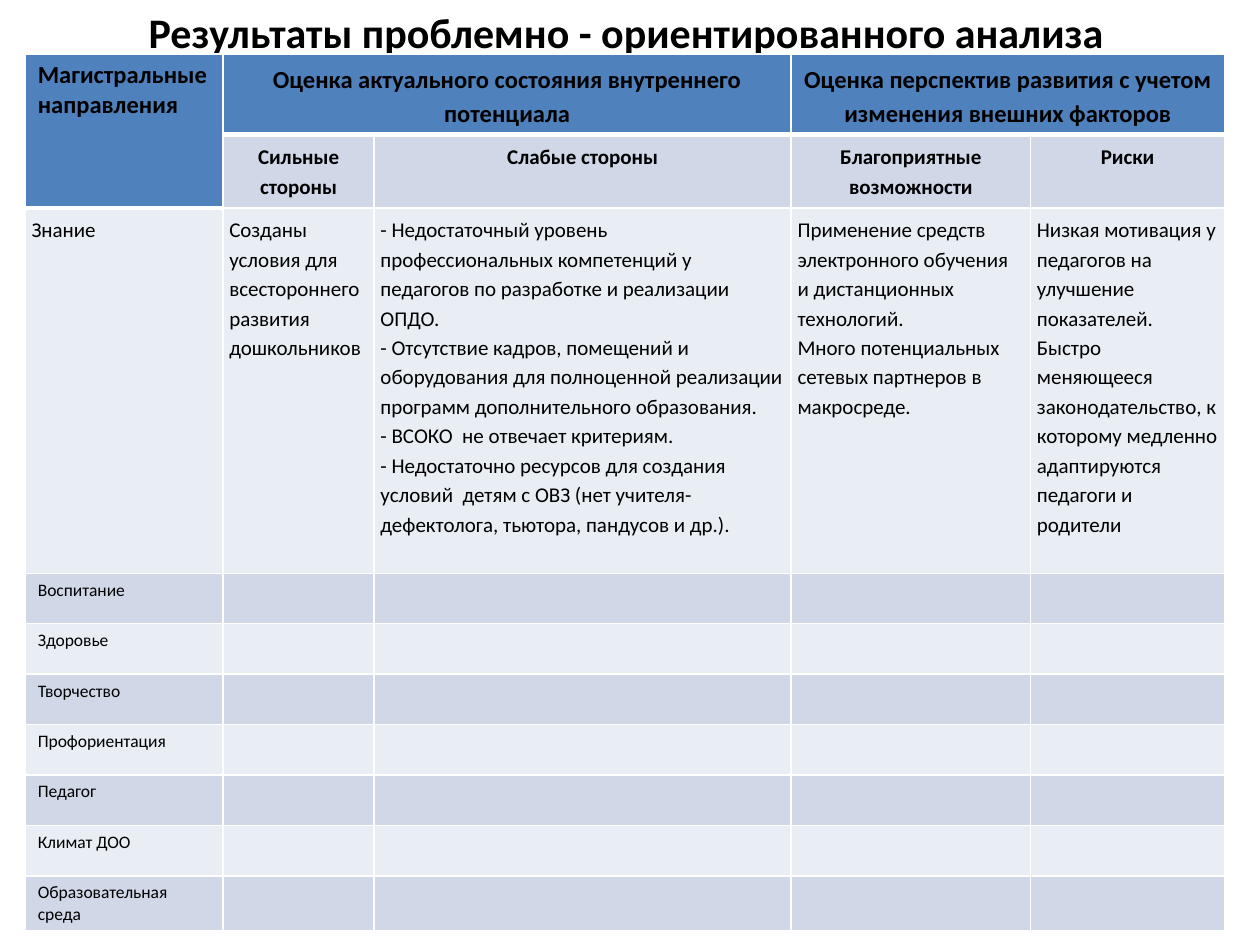
from dataclasses import dataclass

from lxml.etree import SubElement
from pptx import Presentation
from pptx.dml.color import RGBColor
from pptx.enum.text import MSO_ANCHOR, PP_ALIGN
from pptx.oxml.ns import qn
from pptx.util import Inches, Pt


@dataclass(frozen=True)
class Theme:
    font: str = "Calibri"
    text: str = "000000"
    line: str = "FFFFFF"
    head: str = "4F81BD"
    bands: tuple = ("E9EDF4", "D0D8E8")
    title: int = 24
    heading: int = 14
    body: int = 12
    label: int = 10
    spacing: float = 1.15


THEME = Theme()
TITLE = "Результаты проблемно - ориентированного анализа"
HEADINGS = {
    0: "Магистральные направления",
    1: "Оценка актуального состояния внутреннего потенциала",
    3: "Оценка перспектив развития с учетом изменения внешних факторов",
}
SUBHEADINGS = ["Сильные стороны", "Слабые стороны", "Благоприятные возможности", "Риски"]
KNOWLEDGE = [
    ["Знание"],
    ["Созданы условия для всестороннего развития дошкольников"],
    [
        "- Недостаточный уровень профессиональных компетенций у педагогов по разработке и реализации ОПДО.",
        "- Отсутствие кадров, помещений и оборудования для полноценной реализации программ дополнительного образования.",
        "- ВСОКО  не отвечает критериям.",
        "- Недостаточно ресурсов для создания условий  детям с ОВЗ (нет учителя-дефектолога, тьютора, пандусов и др.).",
    ],
    [
        "Применение средств электронного обучения и дистанционных технологий.",
        "Много потенциальных сетевых партнеров в макросреде.",
    ],
    [
        "Низкая мотивация у педагогов на улучшение показателей.",
        "Быстро меняющееся законодательство, к которому медленно адаптируются педагоги и родители",
    ],
]
DIRECTIONS = ["Воспитание", "Здоровье", "Творчество", "Профориентация",
              "Педагог", "Климат ДОО", "Образовательная среда"]
COLS = [1.57, 1.2, 3.31, 1.9, 1.54]
ROWS = [0.64, 0.58, 2.9] + [0.4] * (len(DIRECTIONS) - 1) + [0.43]
MERGES = [((0, 0), (1, 0)), ((0, 1), (0, 2)), ((0, 3), (0, 4))]


def write(tf, lines, size, bold=False, align=PP_ALIGN.LEFT, spacing=None):
    for i, line in enumerate(lines):
        p = tf.add_paragraph() if i else tf.paragraphs[0]
        p.text = line
        p.alignment = align
        p.line_spacing = spacing
        p.font.name = THEME.font
        p.font.size = Pt(size)
        p.font.bold = bold
        p.font.color.rgb = RGBColor.from_string(THEME.text)


def paint(cell, color, bottom):
    tc_pr = cell._tc.get_or_add_tcPr()
    for side, width in (("L", 1), ("R", 1), ("T", 1), ("B", bottom)):
        ln = SubElement(tc_pr, qn(f"a:ln{side}"), w=str(Pt(width)))
        SubElement(SubElement(ln, qn("a:solidFill")), qn("a:srgbClr"), val=THEME.line)
    cell.fill.solid()
    cell.fill.fore_color.rgb = RGBColor.from_string(color)


def tighten(cell):
    cell.margin_left = cell.margin_right = Inches(0.05)
    cell.margin_top = cell.margin_bottom = Inches(0.05)


def add_title(slide):
    sp = slide.shapes.add_textbox(Inches(0.47), Inches(0.05), Inches(9), Inches(0.4))
    tf = sp.text_frame
    tf.word_wrap = True
    tf.vertical_anchor = MSO_ANCHOR.MIDDLE
    tf.margin_top = tf.margin_bottom = 0
    write(tf, [TITLE], THEME.title, True, PP_ALIGN.CENTER)


def add_analysis(slide):
    frame = slide.shapes.add_table(len(ROWS), len(COLS), Inches(0.2), Inches(0.43),
                                   Inches(sum(COLS)), Inches(sum(ROWS)))
    table = frame.table
    for col, width in zip(table.columns, COLS):
        col.width = Inches(width)
    for row, height in zip(table.rows, ROWS):
        row.height = Inches(height)

    for r in range(len(ROWS)):
        for c in range(len(COLS)):
            is_head = r == 0 or (r, c) == (1, 0)
            paint(table.cell(r, c), THEME.head if is_head else THEME.bands[r % 2],
                  3 if is_head else 1)
    for first, last in MERGES:
        table.cell(*first).merge(table.cell(*last))

    for c, text in HEADINGS.items():
        align, spacing = (PP_ALIGN.CENTER, THEME.spacing) if c else (PP_ALIGN.LEFT, None)
        write(table.cell(0, c).text_frame, [text], THEME.heading, True, align, spacing)
    tighten(table.cell(0, 1))
    for c, text in enumerate(SUBHEADINGS, 1):
        cell = table.cell(1, c)
        tighten(cell)
        write(cell.text_frame, [text], THEME.body, True, PP_ALIGN.CENTER, THEME.spacing)
    for c, lines in enumerate(KNOWLEDGE):
        cell = table.cell(2, c)
        tighten(cell)
        write(cell.text_frame, lines, THEME.body, spacing=THEME.spacing)
    for r, text in enumerate(DIRECTIONS, 3):
        write(table.cell(r, 0).text_frame, [text], THEME.label)


def main():
    prs = Presentation()
    prs.slide_width, prs.slide_height = Inches(10), Inches(7.5)
    s = prs.slides.add_slide(prs.slide_layouts[6])
    add_title(s)
    add_analysis(s)
    prs.save("out.pptx")


if __name__ == "__main__":
    main()
